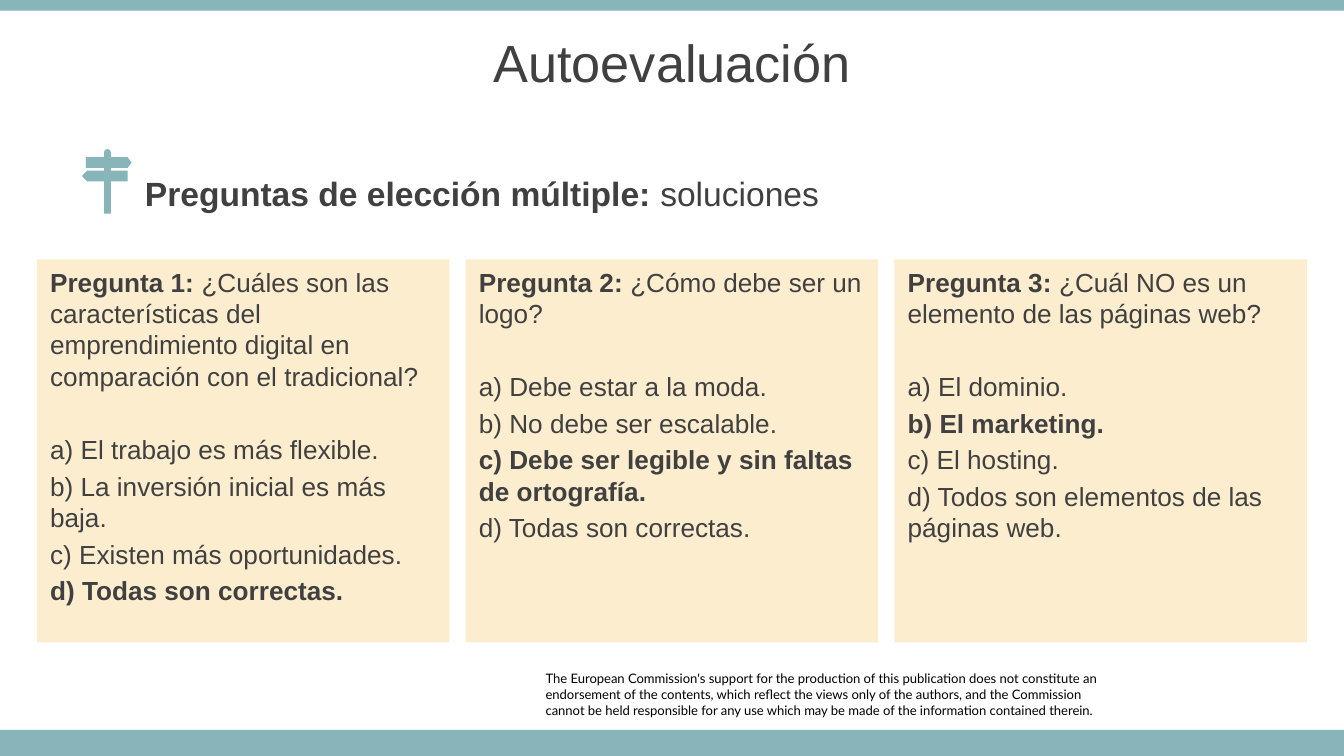
from dataclasses import dataclass
from math import cos, pi, sin

from pptx import Presentation
from pptx.dml.color import RGBColor
from pptx.enum.shapes import MSO_SHAPE
from pptx.enum.text import MSO_ANCHOR, PP_ALIGN
from pptx.util import Inches, Pt

COLORS = {"teal": "87B5BA", "cream": "FCEDCF", "text": "404040", "black": "000000"}
PAGE_WIDTH = 10
PAGE_HEIGHT = PAGE_WIDTH * 9 / 16
LINE_GAP = 2.8
ANSWERS_GAP = 22.4


@dataclass(frozen=True)
class Question:
    """A multiple-choice question and the index of its right answer."""
    label: str
    wording: str
    answers: tuple[str, ...]
    correct: int


@dataclass(frozen=True)
class Area:
    """A rectangle in inches."""
    left: float
    top: float
    width: float
    height: float

    def lengths(self) -> list:
        """Return the rectangle as slide lengths."""
        return [Inches(value) for value in (self.left, self.top, self.width, self.height)]


QUESTIONS = (
    Question(
        "Pregunta 1: ",
        "¿Cuáles son las características del emprendimiento digital en comparación con el tradicional?",
        ("a) El trabajo es más flexible.", "b) La inversión inicial es más baja.",
         "c) Existen más oportunidades.", "d) Todas son correctas."),
        3,
    ),
    Question(
        "Pregunta 2: ",
        "¿Cómo debe ser un logo?",
        ("a) Debe estar a la moda.", "b) No debe ser escalable.",
         "c) Debe ser legible y sin faltas de ortografía.", "d) Todas son correctas."),
        2,
    ),
    Question(
        "Pregunta 3: ",
        "¿Cuál NO es un elemento de las páginas web?",
        ("a) El dominio.", "b) El marketing.", "c) El hosting.",
         "d) Todos son elementos de las páginas web."),
        1,
    ),
)
DISCLAIMER = (
    "The European Commission's support for the production of this publication does not constitute an "
    "endorsement of the contents, which reflect the views only of the authors, and the Commission",
    "cannot be held responsible for any use which may be made of the information contained therein.",
)


def paint(shape, color: str) -> None:
    """Give a shape a flat fill without line or shadow."""
    shape.shadow.inherit = False
    shape.fill.solid()
    shape.fill.fore_color.rgb = RGBColor.from_string(COLORS[color])
    shape.line.fill.background()


def add_block(page, area: Area, color: str):
    """Add a plain filled rectangle."""
    block = page.shapes.add_shape(MSO_SHAPE.RECTANGLE, *area.lengths())
    paint(block, color)
    return block


def write(para, text: str, *, size: float, font: str = "Arial", color: str = "text",
          bold: bool = False) -> None:
    """Append a formatted span to a paragraph."""
    span = para.add_run()
    span.text = text
    span.font.size = Pt(size)
    span.font.name = font
    span.font.bold = bold
    span.font.color.rgb = RGBColor.from_string(COLORS[color])


def add_text_box(page, area: Area, *, anchor=MSO_ANCHOR.MIDDLE):
    """Add a wrapping text box and return its frame."""
    frame = page.shapes.add_textbox(*area.lengths()).text_frame
    frame.word_wrap = True
    frame.vertical_anchor = anchor
    return frame


def add_question(page, question: Question, area: Area) -> None:
    """Draw a question card with the right answer in bold."""
    frame = add_block(page, area, "cream").text_frame
    frame.word_wrap = True
    frame.vertical_anchor = MSO_ANCHOR.TOP
    para = frame.paragraphs[0]
    para.alignment = PP_ALIGN.LEFT
    write(para, question.label, size=14, bold=True)
    write(para, question.wording, size=14)
    for index, answer in enumerate(question.answers):
        para = frame.add_paragraph()
        para.alignment = PP_ALIGN.LEFT
        para.space_before = Pt(LINE_GAP if index else ANSWERS_GAP)
        write(para, answer, size=14, bold=index == question.correct)


def add_signpost(page) -> None:
    """Draw the signpost with a rounded top and two arrow boards."""
    center, radius, cap = 0.8, 0.025, 1.135
    left, right = center - radius, center + radius
    dome = [(center - radius * cos(pi * step / 8), cap - radius * sin(pi * step / 8))
            for step in range(9)]
    right_side = [(right, 1.17), (0.95, 1.17), (0.98, 1.21), (0.95, 1.25), (right, 1.25),
                  (right, 1.27), (0.95, 1.27), (0.95, 1.35), (right, 1.35), (right, 1.59)]
    left_side = [(left, 1.59), (left, 1.35), (0.65, 1.35), (0.61, 1.31), (0.65, 1.27),
                 (left, 1.27), (left, 1.25), (0.64, 1.25), (0.64, 1.17), (left, 1.17)]
    points = [(Inches(x), Inches(y)) for x, y in dome + right_side + left_side]
    builder = page.shapes.build_freeform(*points[0])
    builder.add_line_segments(points[1:], close=True)
    paint(builder.convert_to_shape(), "teal")


def add_disclaimer(page) -> None:
    """Write the small print above the bottom band."""
    frame = add_text_box(page, Area(4.06, 4.99, 4.17, 0.35), anchor=MSO_ANCHOR.TOP)
    frame.margin_left = frame.margin_right = frame.margin_top = frame.margin_bottom = 0
    for index, text in enumerate(DISCLAIMER):
        para = frame.add_paragraph() if index else frame.paragraphs[0]
        write(para, text, size=7, font="Lato", color="black")


def main() -> None:
    """Build the self-assessment slide."""
    deck = Presentation()
    deck.slide_width, deck.slide_height = Inches(PAGE_WIDTH), Inches(PAGE_HEIGHT)
    page = deck.slides.add_slide(deck.slide_layouts[6])

    add_disclaimer(page)
    add_block(page, Area(0, 5.43, PAGE_WIDTH, PAGE_HEIGHT - 5.43), "teal")
    add_block(page, Area(0, 0, PAGE_WIDTH, 0.08), "teal")

    title = add_text_box(page, Area(0, 0.14, PAGE_WIDTH, 0.63)).paragraphs[0]
    title.alignment = PP_ALIGN.CENTER
    write(title, "Autoevaluación", size=28)

    heading = add_text_box(page, Area(0.98, 1.28, 6.69, 0.31)).paragraphs[0]
    write(heading, "Preguntas de elección múltiple: ", size=18, bold=True)
    write(heading, "soluciones", size=18)

    add_signpost(page)

    width, gap = 3.07, 0.12
    pitch = width + gap
    margin = (PAGE_WIDTH - len(QUESTIONS) * pitch + gap) / 2
    for index, question in enumerate(QUESTIONS):
        add_question(page, question, Area(margin + index * pitch, 1.93, width, 2.85))

    deck.save("out.pptx")


if __name__ == "__main__":
    main()
